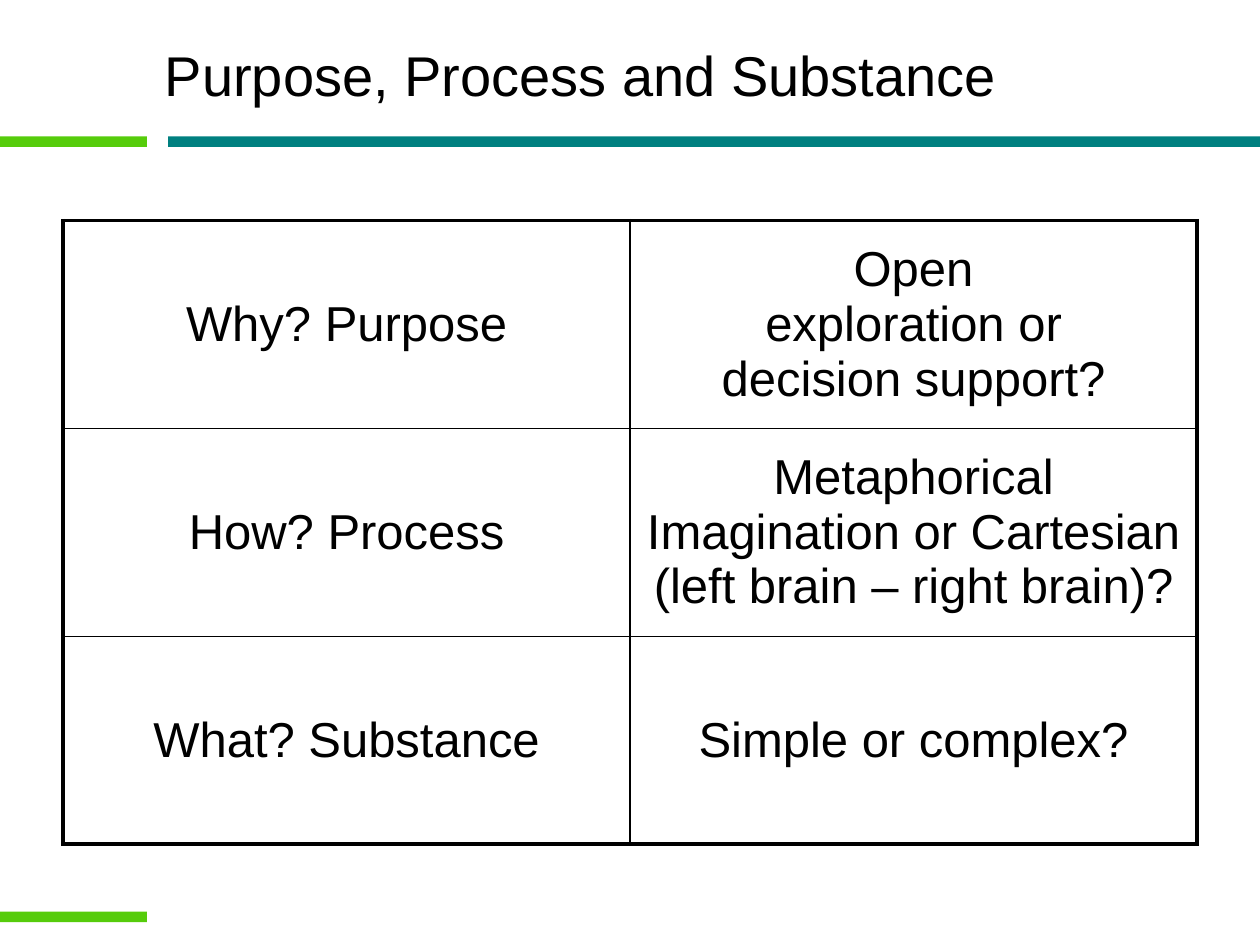
from lxml import etree
from pptx import Presentation
from pptx.dml.color import RGBColor
from pptx.enum.shapes import MSO_SHAPE
from pptx.enum.text import MSO_ANCHOR, PP_ALIGN
from pptx.oxml.ns import qn
from pptx.util import Pt

RECTANGLE = MSO_SHAPE.RECTANGLE
TOP = MSO_ANCHOR.TOP
MIDDLE = MSO_ANCHOR.MIDDLE
CENTER = PP_ALIGN.CENTER
TITLE_ONLY = 5

COLORS = {"teal": "008080", "green": "56CC0B", "ink": "000000", "paper": "FFFFFF"}
BARS = [
    (96, 78, 624, "teal"),
    (0, 78, 84, "green"),
    (0, 521, 84, "green"),
]
BAR_HEIGHT = 6
QUESTIONS = [
    ("Why? Purpose", "Open\nexploration or\ndecision support?"),
    ("How? Process", "Metaphorical Imagination or Cartesian (left brain – right brain)?"),
    ("What? Substance", "Simple or complex?"),
]
COLUMN_WIDTH = 324
ROW_HEIGHT = 118.8
OUTER_LINE = 2.25
INNER_LINE = 1


def rgb(name):
    return RGBColor.from_string(COLORS[name])


def write_text(frame, text, size, anchor=MIDDLE, color="ink", font="Arial"):
    frame.word_wrap = True
    frame.vertical_anchor = anchor
    paragraph = frame.paragraphs[0]
    paragraph.text = text
    paragraph.alignment = CENTER
    for run in paragraph.runs:
        run.font.name = font
        run.font.size = Pt(size)
        run.font.color.rgb = rgb(color)


def add_title(slide, text):
    title = slide.shapes.title
    title.left, title.top, title.width, title.height = Pt(8), Pt(19.5), Pt(648), Pt(90)
    write_text(title.text_frame, text, size=32, anchor=TOP)


def add_bar(slide, left, top, width, color):
    bar = slide.shapes.add_shape(RECTANGLE, Pt(left), Pt(top), Pt(width), Pt(BAR_HEIGHT))
    bar.shadow.inherit = False
    bar.fill.solid()
    bar.fill.fore_color.rgb = rgb(color)
    bar.line.fill.background()


def add_border(cell, side, width):
    properties = cell._tc.get_or_add_tcPr()
    border = etree.SubElement(properties, qn(f"a:ln{side}"), w=str(Pt(width)))
    fill = etree.SubElement(border, qn("a:solidFill"))
    etree.SubElement(fill, qn("a:srgbClr"), val=COLORS["ink"])


def add_question_table(slide, rows):
    row_count, column_count = len(rows), len(rows[0])
    table = slide.shapes.add_table(
        row_count, column_count, Pt(36), Pt(126),
        Pt(COLUMN_WIDTH * column_count), Pt(ROW_HEIGHT * row_count),
    ).table
    table.first_row = False
    table.horz_banding = False
    for row_index, row in enumerate(rows):
        table.rows[row_index].height = Pt(ROW_HEIGHT)
        for column_index, text in enumerate(row):
            cell = table.cell(row_index, column_index)
            outer_sides = {
                "L": column_index == 0,
                "R": column_index == column_count - 1,
                "T": row_index == 0,
                "B": row_index == row_count - 1,
            }
            for side, is_outer in outer_sides.items():
                add_border(cell, side, OUTER_LINE if is_outer else INNER_LINE)
            cell.fill.solid()
            cell.fill.fore_color.rgb = rgb("paper")
            write_text(cell.text_frame, text, size=28)
            cell.vertical_anchor = MIDDLE


def main():
    presentation = Presentation()
    presentation.slide_width = Pt(720)
    presentation.slide_height = Pt(540)
    slide = presentation.slides.add_slide(presentation.slide_layouts[TITLE_ONLY])
    for left, top, width, color in BARS:
        add_bar(slide, left, top, width, color)
    add_title(slide, "Purpose, Process and Substance")
    add_question_table(slide, QUESTIONS)
    presentation.save("out.pptx")


if __name__ == "__main__":
    main()
